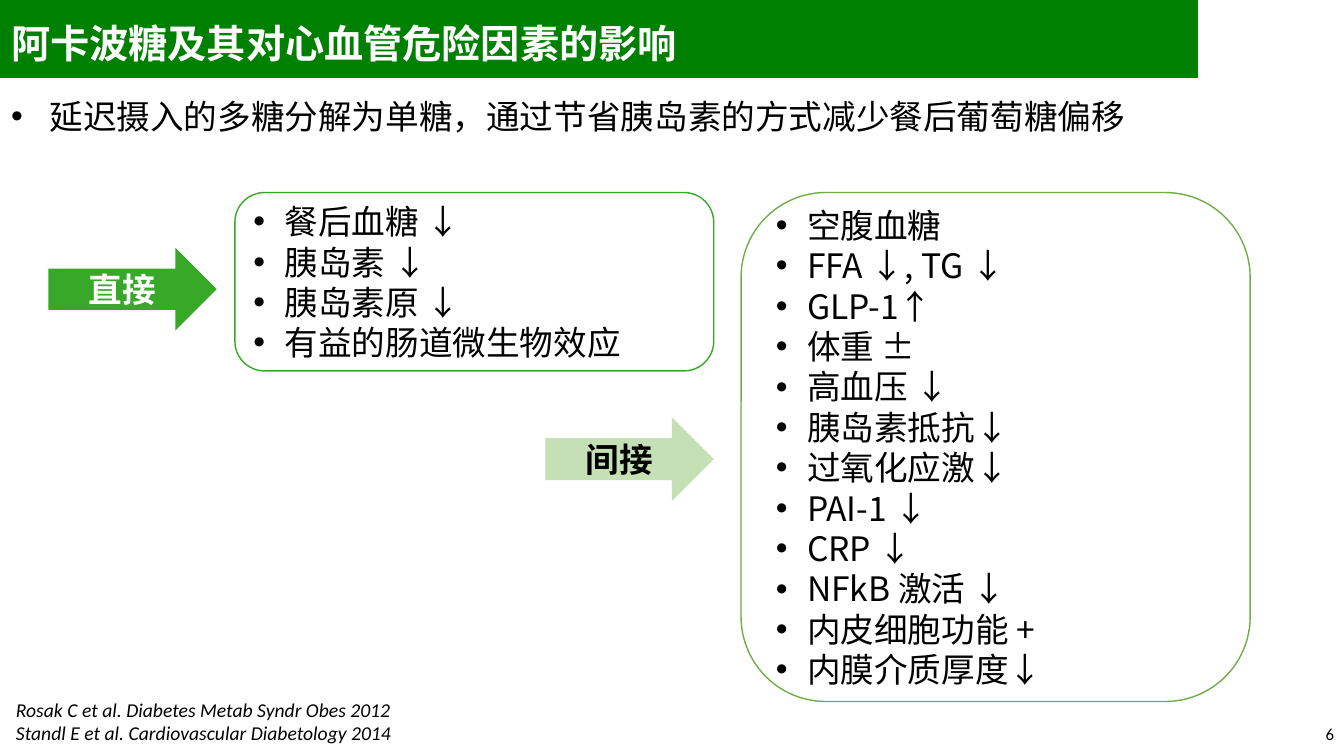
import pptx
import pptx.util
import pptx.dml.color
import pptx.enum.shapes
import pptx.enum.text
import pptx.oxml.ns
import lxml.etree
from dataclasses import dataclass

Pt = pptx.util.Pt
Shape = pptx.enum.shapes.MSO_SHAPE
Align = pptx.enum.text.PP_ALIGN
Anchor = pptx.enum.text.MSO_ANCHOR
color = pptx.dml.color.RGBColor.from_string


@dataclass(frozen=True)
class Theme:
    band: str = "008001"
    green: str = "37A828"
    pale: str = "C5E0B4"
    rim: str = "70AD47"
    white: str = "FFFFFF"
    black: str = "000000"
    hans: str = "Noto Sans CJK SC"
    latin: str = "Calibri"
    head: int = 28
    text: int = 24
    cite: int = 14
    page: int = 12
    pitch: float = 28.85


theme = Theme()
deck = pptx.Presentation()
deck.slide_width = pptx.util.Inches(13.33)
deck.slide_height = pptx.util.Inches(7.5)
slide = deck.slides.add_slide(deck.slide_layouts[1])
shapes = slide.shapes


def place(*box):
    """Turn percent shares of the slide into left, top, width, height."""
    sides = (deck.slide_width, deck.slide_height) * 2
    return [round(side * share / 100) for side, share in zip(sides, box)]


def write(shape, lines, size, font=theme.hans, ink=theme.black, bold=False,
          slant=False, align=Align.LEFT, anchor=Anchor.MIDDLE, indent=0, wrap=True):
    frame = shape.text_frame
    frame.word_wrap = wrap
    frame.auto_size = pptx.enum.text.MSO_AUTO_SIZE.NONE
    frame.vertical_anchor = anchor
    for i, line in enumerate(lines):
        para = frame.paragraphs[0] if i == 0 else frame.add_paragraph()
        para.alignment = align
        para.space_before = para.space_after = Pt(0)
        if size == theme.text:
            para.line_spacing = Pt(theme.pitch)
        if indent:
            props = para._p.get_or_add_pPr()
            step = pptx.util.Inches(indent)
            props.set("marL", str(step))
            props.set("indent", str(-step))
            for tag, key, value in (("a:buFont", "typeface", "Arial"),
                                    ("a:buChar", "char", "•")):
                mark = lxml.etree.SubElement(props, pptx.oxml.ns.qn(tag))
                mark.set(key, value)
        run = para.add_run()
        run.text = line
        run.font.size = Pt(size)
        run.font.name = font
        run.font.bold, run.font.italic = bold, slant
        run.font.color.rgb = color(ink)
        east = lxml.etree.SubElement(run._r.get_or_add_rPr(), pptx.oxml.ns.qn("a:ea"))
        east.set("typeface", font)


# Green band behind the title
band = shapes.add_shape(Shape.RECTANGLE, *place(0, 0, 89.1, 10.27))
band.shadow.inherit = False
band.fill.solid()
band.fill.fore_color.rgb = band.line.color.rgb = color(theme.band)
band.line.width = Pt(1)
shapes._spTree.insert(2, band._element)

# Title and lead point
title, body = shapes.title, slide.placeholders[1]
title.left, title.top, title.width, title.height = place(0.08, 1.87, 100, 7.6)
write(title, ["阿卡波糖及其对心血管危险因素的影响"], theme.head, ink=theme.white, bold=True)
body.left, body.top, body.width, body.height = place(0.08, 12, 99.5, 6.67)
write(body, ["延迟摄入的多糖分解为单糖，通过节省胰岛素的方式减少餐后葡萄糖偏移"],
      theme.text, anchor=Anchor.TOP, indent=0.38)

# Arrows for the direct and indirect effects
arrows = [
    ("间接", (40.58, 55.2, 12.53, 11.07), theme.pale, theme.black),
    ("直接", (3.6, 32.8, 12.53, 10.93), theme.green, theme.white),
]
for label, box, fill, ink in arrows:
    arrow = shapes.add_shape(Shape.RIGHT_ARROW, *place(*box))
    arrow.shadow.inherit = False
    arrow.fill.solid()
    arrow.fill.fore_color.rgb = color(fill)
    arrow.line.fill.background()
    arrow.text_frame.margin_top = arrow.text_frame.margin_bottom = 0
    write(arrow, [label], theme.text, ink=ink, bold=True, align=Align.CENTER)

# Rounded panels that list the effects
panels = [
    ((17.48, 25.47, 35.63, 23.6), theme.green,
     ["餐后血糖 ↓", "胰岛素 ↓", "胰岛素原 ↓", "有益的肠道微生物效应"]),
    ((55.14, 25.47, 37.88, 67.33), theme.rim,
     ["空腹血糖", "FFA ↓, TG ↓", "GLP-1↑", "体重 ±", "高血压 ↓", "胰岛素抵抗↓",
      "过氧化应激↓", "PAI-1 ↓", "CRP ↓", "NFkB 激活 ↓", "内皮细胞功能 +",
      "内膜介质厚度↓"]),
]
for box, rim, effects in panels:
    panel = shapes.add_shape(Shape.ROUNDED_RECTANGLE, *place(*box))
    panel.shadow.inherit = False
    panel.fill.background()
    panel.line.color.rgb = color(rim)
    panel.line.width = Pt(1)
    write(panel, effects, theme.text, indent=0.31)

# Sources and page number
cite = shapes.add_textbox(*place(0.45, 91.6, 29.7, 7.6))
write(cite, ["Rosak C et al. Diabetes Metab Syndr Obes 2012",
             "Standl E et al. Cardiovascular Diabetology 2014"],
      theme.cite, font=theme.latin, slant=True, anchor=Anchor.TOP, wrap=False)
page = shapes.add_textbox(*place(95.1, 94.13, 4.9, 5.87))
write(page, ["6"], theme.page, font=theme.latin, align=Align.RIGHT)

deck.save("out.pptx")
